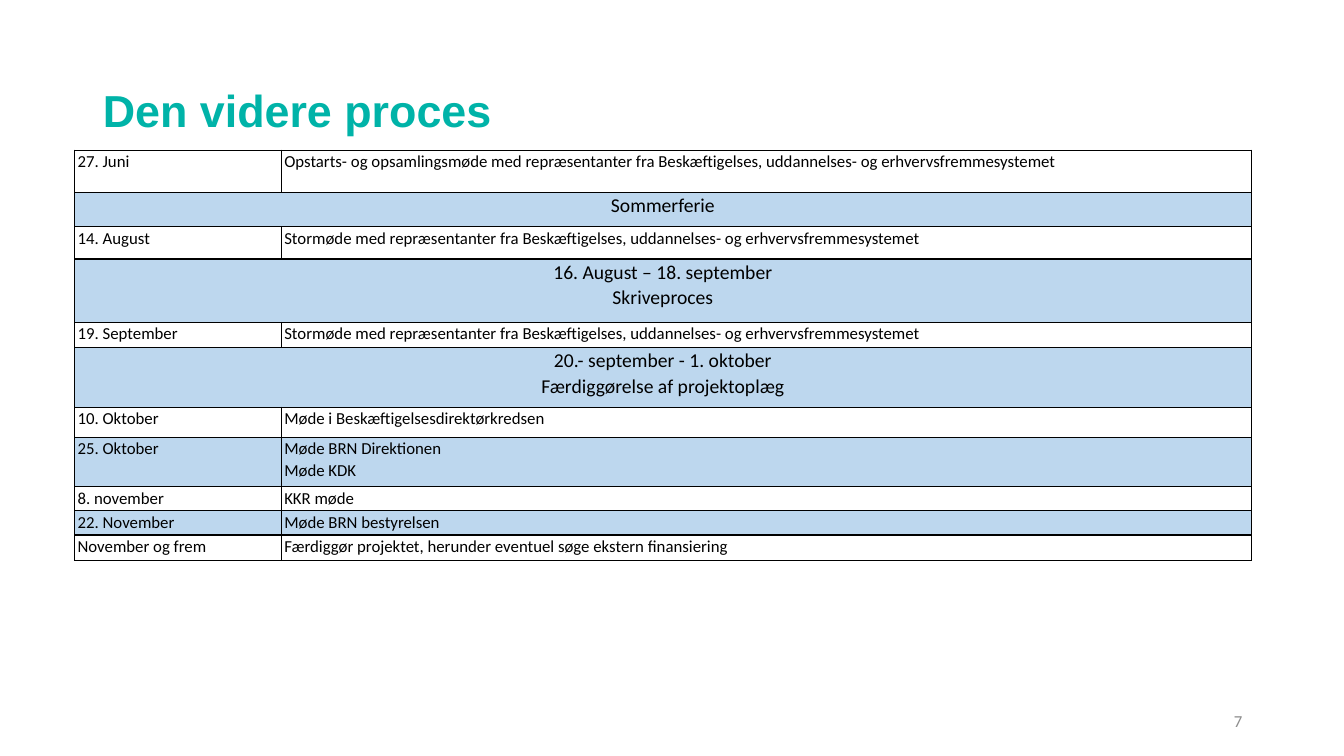
from lxml import etree
from pptx import Presentation
from pptx.dml.color import RGBColor
from pptx.enum.text import MSO_ANCHOR, PP_ALIGN
from pptx.oxml.ns import qn
from pptx.util import Inches, Pt

LEFT, CENTER, RIGHT = PP_ALIGN.LEFT, PP_ALIGN.CENTER, PP_ALIGN.RIGHT
MIDDLE = MSO_ANCHOR.MIDDLE
TITLE_ONLY = 5
TEAL, GREY, BLACK, BLUE = "00B3A8", "8C8C8C", "000000", "BDD7EE"
MEETING = ("Stormøde med repræsentanter fra Beskæftigelses, "
           "uddannelses- og erhvervsfremmesystemet")
COLS = (2.05, 9.62)
STEPS = [
    (0.42, None, "27. Juni", "Opstarts- og opsamlingsmøde med repræsentanter fra "
     "Beskæftigelses, uddannelses- og erhvervsfremmesystemet"),
    (0.34, BLUE, "Sommerferie"),
    (0.32, None, "14. August", MEETING),
    (0.63, BLUE, "16. August – 18. september\nSkriveproces"),
    (0.25, None, "19. September", MEETING),
    (0.59, BLUE, "20.- september - 1. oktober\nFærdiggørelse af projektoplæg"),
    (0.3, None, "10. Oktober", "Møde i Beskæftigelsesdirektørkredsen"),
    (0.49, BLUE, "25. Oktober", "Møde BRN Direktionen\vMøde KDK"),
    (0.24, None, "8. november", "KKR møde"),
    (0.24, BLUE, "22. November", "Møde BRN bestyrelsen"),
    (0.25, None, "November og frem",
     "Færdiggør projektet, herunder eventuel søge ekstern finansiering"),
]


def color(code):
    return RGBColor.from_string(code)


def write(frame, text, font, size, code, align=LEFT, space=1.0, bold=False):
    frame.text = text
    for para in frame.paragraphs:
        para.alignment = align
        para.line_spacing = space
        para.font.name = font
        para.font.size = Pt(size)
        para.font.bold = bold
        para.font.color.rgb = color(code)


def place(shape, box):
    shape.left, shape.top, shape.width, shape.height = map(Inches, box)


def add_title(slide, box):
    title = slide.shapes.title
    place(title, box)
    title.text_frame.vertical_anchor = MIDDLE
    write(title.text_frame, "Den videre proces", "Arial", 32, TEAL, space=0.9, bold=True)


def add_number(slide, box):
    frame = slide.shapes.add_textbox(*map(Inches, box)).text_frame
    frame.word_wrap = True
    frame.vertical_anchor = MIDDLE
    write(frame, "7", "Calibri", 12, GREY, RIGHT)


def add_border(cell):
    props = cell._tc.get_or_add_tcPr()
    for side in ("a:lnL", "a:lnR", "a:lnT", "a:lnB"):
        line = etree.SubElement(props, qn(side), w=str(Pt(1)))
        fill = etree.SubElement(line, qn("a:solidFill"))
        etree.SubElement(fill, qn("a:srgbClr"), val=BLACK)


def style_cell(cell, text, tint, wide):
    cell.margin_left = cell.margin_right = Inches(0.03)
    cell.margin_top = cell.margin_bottom = 0
    write(cell.text_frame, text, "Calibri", 14 if wide else 12, BLACK,
          CENTER if wide else LEFT, 1.07)
    add_border(cell)
    if tint:
        cell.fill.solid()
        cell.fill.fore_color.rgb = color(tint)
    else:
        cell.fill.background()


def add_plan(slide, box):
    frame = slide.shapes.add_table(len(STEPS), len(COLS), *map(Inches, box))
    table = frame.table
    table.first_row = table.horz_banding = False
    for col, width in zip(table.columns, COLS):
        col.width = Inches(width)
    for row, (height, tint, *texts) in zip(table.rows, STEPS):
        row.height = Inches(height)
        date, task = row.cells
        wide = len(texts) == 1
        style_cell(date, texts[0], tint, wide)
        style_cell(task, "" if wide else texts[1], tint, wide)
        if wide:
            date.merge(task)


def main():
    deck = Presentation()
    deck.slide_width, deck.slide_height = Inches(13.33), Inches(7.5)
    slide = deck.slides.add_slide(deck.slide_layouts[TITLE_ONLY])
    add_title(slide, (0.92, 0.4, 8.13, 1.45))
    add_number(slide, (9.42, 6.95, 3, 0.4))
    add_plan(slide, (0.74, 1.49, sum(COLS), sum(step[0] for step in STEPS)))
    deck.save("out.pptx")


if __name__ == "__main__":
    main()
